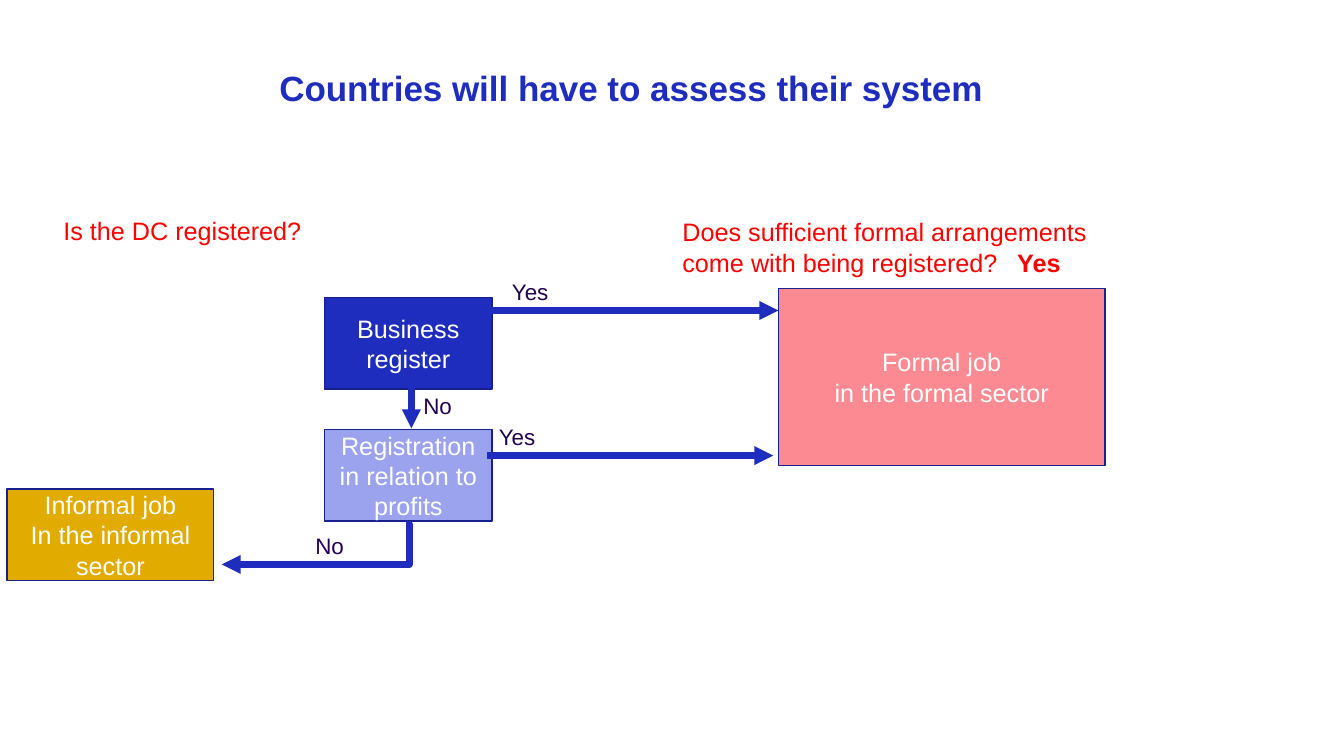
"""Build a flowchart slide on assessing formal and informal jobs."""
from lxml.etree import SubElement
from pptx import Presentation
from pptx.dml.color import RGBColor
from pptx.enum.shapes import MSO_CONNECTOR, MSO_SHAPE
from pptx.enum.text import MSO_ANCHOR, PP_ALIGN
from pptx.oxml.ns import qn
from pptx.util import Inches, Pt

BLUE, EDGE, RED, PURPLE, WHITE = "1E2DBE", "16218D", "FF0000", "230050", "FFFFFF"

TITLE = ("Countries will have to assess their system", 2.77, 0.71, 9.59, 0.5)
BOXES = [
    (["Registration in relation to profits"], 3.22, 4.26, 1.66, 0.91, "9BA3EF"),
    (["Business register"], 3.22, 2.95, 1.66, 0.91, BLUE),
    (["Formal job", "in the formal sector"], 7.72, 2.86, 3.24, 1.76, "FC8A93"),
    (["Informal job", "In the informal sector"], 0.07, 4.85, 2.05, 0.91, "E1AB00"),
]
QUESTIONS = [
    ("Is the DC registered?", 0.53, 2.09, 4.66, 0.4, False),
    ("Does sufficient formal arrangements come with being registered?",
     6.67, 2.1, 4.66, 0.71, False),
    ("Yes", 9.99, 2.4, 0.77, 0.4, True),
]
ANSWERS = [("Yes", 4.98, 2.71), ("No", 4.1, 3.84), ("Yes", 4.85, 4.15), ("No", 3.03, 5.23)]
ARROWS = [
    (MSO_CONNECTOR.STRAIGHT, 4.87, 3.08, 7.72, 3.08),
    (MSO_CONNECTOR.STRAIGHT, 4.83, 4.52, 7.67, 4.52),
    (MSO_CONNECTOR.STRAIGHT, 4.08, 3.84, 4.08, 4.25),
    (MSO_CONNECTOR.ELBOW, 4.03, 5.2, 2.2, 5.6),
]
ELBOW_BEND = -1700


def color(code):
    """Turn a hex string into a colour."""
    return RGBColor.from_string(code)


def write(box, lines, size, code, bold=False, **layout):
    """Fill a box with one paragraph per line."""
    frame = box.text_frame
    frame.word_wrap = True
    frame.text = "\n".join(lines)
    for para in frame.paragraphs:
        for name, value in layout.items():
            setattr(para, name, value)
        for span in para.runs:
            for name, value in {"name": "Arial", "size": Pt(size), "bold": bold}.items():
                setattr(span.font, name, value)
            span.font.color.rgb = color(code)
    return frame


def add_text(page, text, place, size, code, bold=False, **layout):
    """Add a text box at a place given in inches."""
    box = page.shapes.add_textbox(*map(Inches, place))
    return write(box, [text], size, code, bold, **layout)


def add_box(page, lines, place, fill):
    """Add a filled flowchart box."""
    box = page.shapes.add_shape(MSO_SHAPE.RECTANGLE, *map(Inches, place))
    box.shadow.inherit = False
    box.fill.solid()
    box.fill.fore_color.rgb = color(fill)
    box.line.color.rgb = color(EDGE)
    box.line.width = Pt(1)
    frame = write(box, lines, 18, WHITE, alignment=PP_ALIGN.CENTER)
    frame.vertical_anchor = MSO_ANCHOR.MIDDLE


def add_arrow(page, kind, ends):
    """Add a thick arrow between two points."""
    arrow = page.shapes.add_connector(kind, *map(Inches, ends))
    arrow.line.color.rgb = color(BLUE)
    arrow.line.width = Pt(4.5)
    properties = arrow.line._get_or_add_ln().getparent()
    SubElement(arrow.line._get_or_add_ln(), qn("a:tailEnd"), type="triangle")
    SubElement(properties, qn("a:effectLst"))
    if kind == MSO_CONNECTOR.ELBOW:
        guides = properties.find(qn("a:prstGeom")).find(qn("a:avLst"))
        SubElement(guides, qn("a:gd"), name="adj1", fmla=f"val {ELBOW_BEND}")


def main():
    """Build and save the slide."""
    deck = Presentation()
    deck.slide_width, deck.slide_height = Inches(13.33), Inches(7.5)
    page = deck.slides.add_slide(deck.slide_layouts[6])
    text, *place = TITLE
    frame = add_text(page, text, place, 25, BLUE, True, line_spacing=0.9)
    for side in ("left", "top", "right", "bottom"):
        setattr(frame, f"margin_{side}", 0)
    for lines, *place, fill in BOXES:
        add_box(page, lines, place, fill)
    for text, *place, bold in QUESTIONS:
        add_text(page, text, place, 18, RED, bold)
    for text, left, top in ANSWERS:
        add_text(page, text, (left, top, 0.77, 0.37), 16, PURPLE)
    for kind, *ends in ARROWS:
        add_arrow(page, kind, ends)
    deck.save("out.pptx")


if __name__ == "__main__":
    main()
